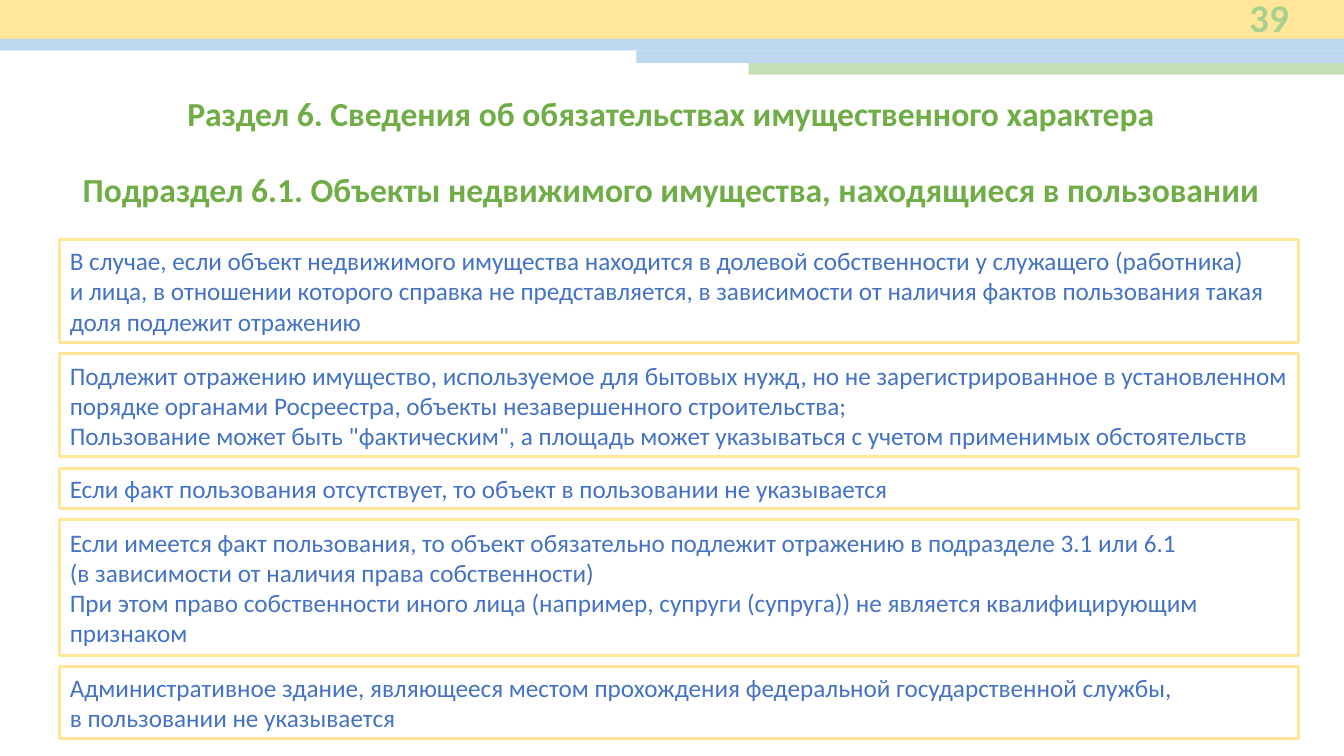
from pptx import Presentation
from pptx.dml.color import RGBColor
from pptx.enum.shapes import MSO_SHAPE
from pptx.enum.text import MSO_ANCHOR, MSO_AUTO_SIZE, PP_ALIGN
from pptx.util import Emu, Pt

PX = 9525
RECTANGLE = MSO_SHAPE.RECTANGLE
TOP, MIDDLE = MSO_ANCHOR.TOP, MSO_ANCHOR.MIDDLE
LEFT, CENTER, RIGHT = PP_ALIGN.LEFT, PP_ALIGN.CENTER, PP_ALIGN.RIGHT
NO_AUTOFIT = MSO_AUTO_SIZE.NONE

YELLOW = RGBColor(0xFF, 0xE6, 0x99)
LIGHT_BLUE = RGBColor(0xBD, 0xD7, 0xEE)
LIGHT_GREEN = RGBColor(0xC5, 0xE0, 0xB4)
GREEN = RGBColor(0x70, 0xAD, 0x47)
NUMBER_GREEN = RGBColor(0xA9, 0xD1, 0x8E)
BLUE = RGBColor(0x44, 0x72, 0xC4)

SLIDE_WIDTH, SLIDE_HEIGHT = 1280, 720
MARGIN = 57
HEADING_WIDTH, HEADING_HEIGHT = 1164, 48
BOX_WIDTH, BOX_GAP = 1180, 11


def px(*lengths):
    return [Emu(length * PX) for length in lengths]


def write(shape, paragraphs, size, color, align, anchor, bold=False):
    """Fill a shape with paragraphs, each given as a list of lines."""
    frame = shape.text_frame
    frame.word_wrap = True
    frame.auto_size = NO_AUTOFIT
    frame.vertical_anchor = anchor
    for index, lines in enumerate(paragraphs):
        paragraph = frame.add_paragraph() if index else frame.paragraphs[0]
        paragraph.alignment = align
        for line_index, line in enumerate(lines):
            if line_index:
                paragraph.add_line_break()
            run = paragraph.add_run()
            run.text = line
            run.font.name = "Calibri"
            run.font.size = Pt(size)
            run.font.bold = bold
            run.font.color.rgb = color


presentation = Presentation()
presentation.slide_width, presentation.slide_height = px(SLIDE_WIDTH, SLIDE_HEIGHT)
slide = presentation.slides.add_slide(presentation.slide_layouts[5])
shapes = slide.shapes

# Header bands, stacked and running to the right edge: left, height, colour
bands = [
    (0, 37, YELLOW),
    (0, 11, LIGHT_BLUE),
    (606, 12, LIGHT_BLUE),
    (713, 11, LIGHT_GREEN),
]
top = 0
for left, height, color in bands:
    band = shapes.add_shape(RECTANGLE, *px(left, top, SLIDE_WIDTH - left, height))
    band.shadow.inherit = False
    band.fill.solid()
    band.fill.fore_color.rgb = color
    band.line.fill.background()
    top += height

# Headings
title = shapes.title
title.left, title.top, title.width, title.height = px(
    MARGIN, 84, HEADING_WIDTH, HEADING_HEIGHT)
write(title, [["Раздел 6. Сведения об обязательствах имущественного характера"]],
      24, GREEN, CENTER, TOP, bold=True)

subtitle = shapes.add_textbox(*px(MARGIN, 156, HEADING_WIDTH, HEADING_HEIGHT))
write(subtitle,
      [["Подраздел 6.1. Объекты недвижимого имущества, находящиеся в пользовании"]],
      24, GREEN, CENTER, TOP, bold=True)

# Framed notes: height, paragraphs
notes = [
    (98, [["В случае, если объект недвижимого имущества находится в долевой "
           "собственности у служащего (работника) ",
           "и лица, в отношении которого справка не представляется, в зависимости "
           "от наличия фактов пользования такая доля подлежит отражению"]]),
    (98, [["Подлежит отражению имущество, используемое для бытовых нужд, но не "
           "зарегистрированное в установленном порядке органами Росреестра, "
           "объекты незавершенного строительства;"],
          ["Пользование может быть \"фактическим\", а площадь может указываться "
           "с учетом применимых обстоятельств"]]),
    (38, [["Если факт пользования отсутствует, то объект в пользовании "
           "не указывается"]]),
    (129, [["Если имеется факт пользования, то объект обязательно подлежит "
            "отражению в подразделе 3.1 или 6.1 ",
            "(в зависимости от наличия права собственности)"],
           ["При этом право собственности иного лица (например, супруги (супруга)) "
            "не является квалифицирующим признаком"]]),
    (68, [["Административное здание, являющееся местом прохождения федеральной "
           "государственной службы, ",
           "в пользовании не указывается"]]),
]
top = 228
for height, paragraphs in notes:
    box = shapes.add_shape(RECTANGLE, *px(MARGIN, top, BOX_WIDTH, height))
    box.shadow.inherit = False
    box.fill.background()
    box.line.color.rgb = YELLOW
    box.line.width = Pt(2.25)
    write(box, paragraphs, 18, BLUE, LEFT, MIDDLE)
    top += height + BOX_GAP

page_number = shapes.add_textbox(*px(1117, -5, 120, 42))
write(page_number, [["39"]], 28, NUMBER_GREEN, RIGHT, MIDDLE, bold=True)

presentation.save("out.pptx")
